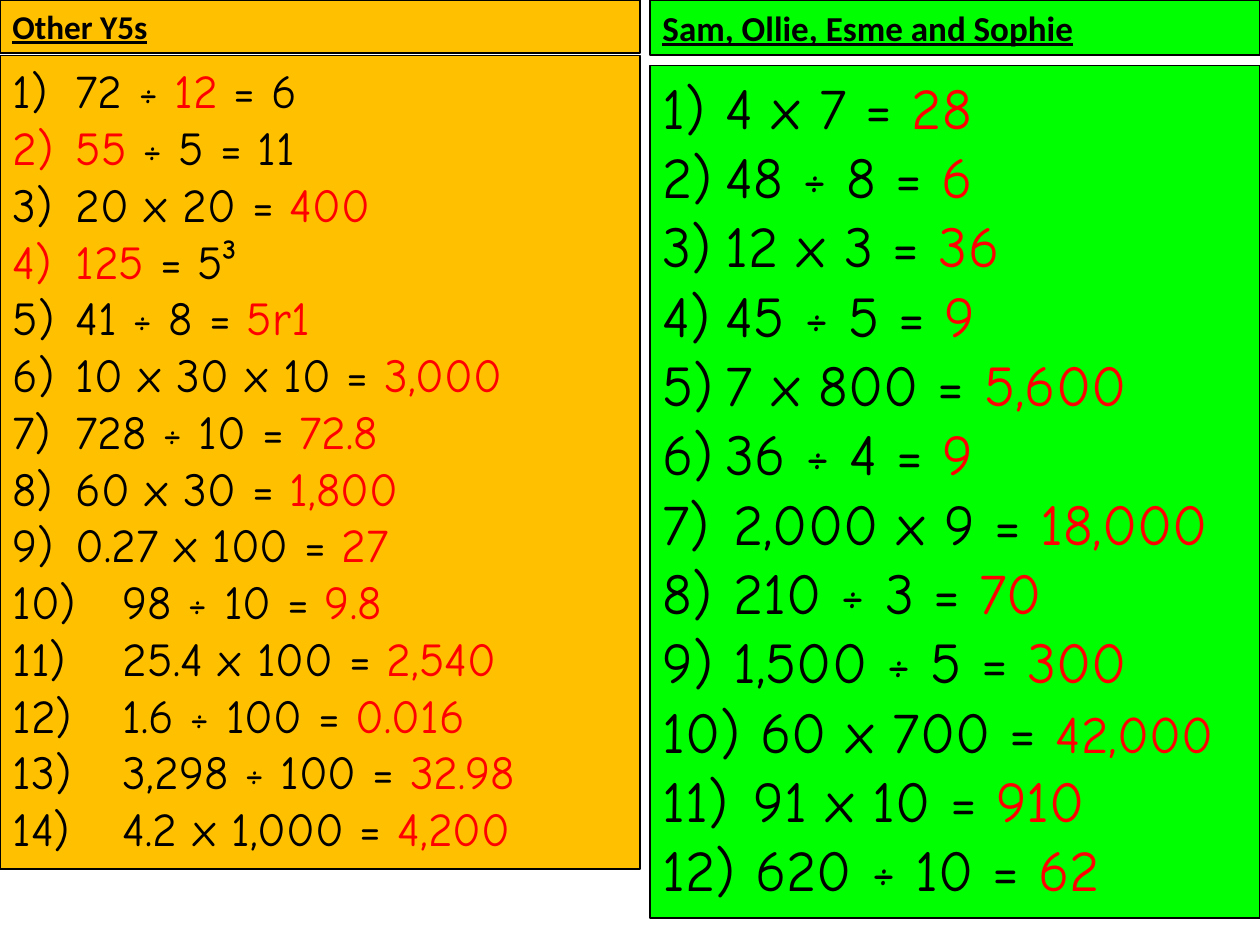
from lxml.etree import SubElement
from pptx import Presentation
from pptx.dml.color import RGBColor as Rgb
from pptx.enum.text import MSO_AUTO_SIZE as AutoSize
from pptx.util import Pt

COLOURS = {"orange": "FFC000", "green": "00FF00", "ink": "000000", "answer": "FF0000"}

# Answers stand between bars
OTHER_SUMS = [
    "72 ÷ |12| = 6", "|55| ÷ 5 = 11", "20 x 20 = |400|", "|125| = 5³",
    "41 ÷ 8 = |5r1|", "10 x 30 x 10 = |3,000|", "728 ÷ 10 = |72.8|",
    "60 x 30 = |1,800|", "0.27 x 100 = |27|", "98 ÷ 10 = |9.8|",
    "25.4 x 100 = |2,540|", "1.6 ÷ 100 = |0.016|", "3,298 ÷ 100 = |32.98|",
    "4.2 x 1,000 = |4,200|",
]
GROUP_SUMS = [
    "4 x 7 = |28|", "48 ÷ 8 = |6|", "12 x 3 = |36|", "45 ÷ 5 = |9|",
    "7 x 800 = |5,600|", "36 ÷ 4 = |9|", "2,000 x 9 = |18,000|",
    "210 ÷ 3 = |70|", "1,500 ÷ 5 = |300|", "60 x 700 = |42,000|",
    "91 x 10 = |910|", "620 ÷ 10 = |62|",
]
# Hanging indents, one per sum
OTHER_INDENTS = [36] * 9 + [63] * 5
GROUP_INDENTS = [36] * 6 + [40.5] * 3 + [56, 52, 53]


class Board:
    """Style and current slide of the answer board."""

    heading_font = "Calibri"
    sum_font = "Comic Neue"

    def __init__(self, slide):
        self.slide = slide

    def colour(self, name):
        return Rgb.from_string(COLOURS[name])

    def panel(self, left, top, width, height, fill):
        box = self.slide.shapes.add_textbox(Pt(left), Pt(top), Pt(width), Pt(height))
        box.fill.solid()
        box.fill.fore_color.rgb = self.colour(fill)
        box.line.color.rgb = self.colour("ink")
        box.line.width = Pt(1)
        box.text_frame.word_wrap = True
        box.text_frame.auto_size = AutoSize.SHAPE_TO_FIT_TEXT
        return box.text_frame

    def heading(self, left, width, height, fill, text, size):
        para = self.panel(left, 0, width, height, fill).paragraphs[0]
        para.text = text
        font = para.font
        font.name, font.size = self.heading_font, Pt(size)
        font.bold = font.underline = True
        font.color.rgb = self.colour("ink")

    def number(self, para, indent, start):
        props = para._p.get_or_add_pPr()
        props.set("marL", str(Pt(indent)))
        props.set("indent", str(-Pt(indent)))
        namespace = props.nsmap["a"]
        SubElement(props, f"{{{namespace}}}buFont", typeface="+mj-lt")
        marker = SubElement(props, f"{{{namespace}}}buAutoNum", type="arabicParenR")
        if start > 1:
            marker.set("startAt", str(start))

    def sums(self, left, top, width, height, fill, lines, indents, size,
             restart=None, small=None):
        frame = self.panel(left, top, width, height, fill)
        for index, (line, indent) in enumerate(zip(lines, indents)):
            para = frame.add_paragraph() if index else frame.paragraphs[0]
            start = restart if restart and index + 1 >= restart else 1
            self.number(para, indent, start)
            for part, text in enumerate(line.split("|")):
                if not text:
                    continue
                span = para.add_run()
                span.text = text
                font = span.font
                font.name = self.sum_font
                font.size = Pt(30 if text == small else size)
                font.color.rgb = self.colour("answer" if part % 2 else "ink")


def main():
    deck = Presentation()
    deck.slide_width, deck.slide_height = Pt(720), Pt(540)
    board = Board(deck.slides.add_slide(deck.slide_layouts[6]))

    # Left column
    board.heading(0, 365.8, 30.2, "orange", "Other Y5s", 19)
    board.sums(0, 31.7, 365.8, 465.1, "orange", OTHER_SUMS, OTHER_INDENTS, 27)

    # Right column: the numbering restarts at 7, and one long answer is smaller
    board.heading(371.5, 348.5, 31.7, "green", "Sam, Ollie, Esme and Sophie", 20)
    board.sums(371.5, 37.4, 348.5, 487.4, "green", GROUP_SUMS, GROUP_INDENTS, 33,
               restart=7, small="42,000")

    deck.save("out.pptx")


if __name__ == "__main__":
    main()
